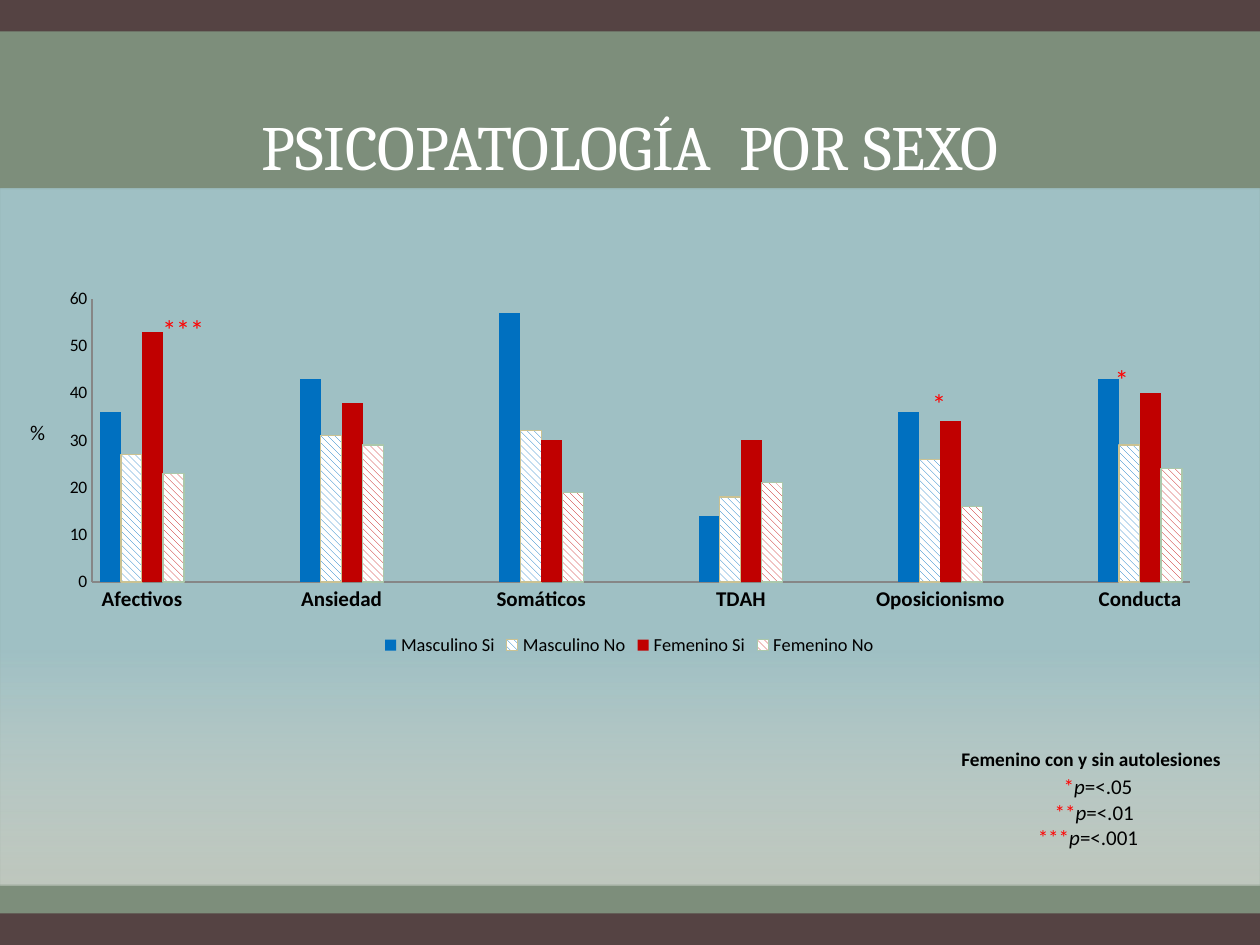
from collections import namedtuple
from dataclasses import dataclass

from lxml import etree
from pptx import Presentation
from pptx.chart.data import CategoryChartData
from pptx.dml.color import RGBColor
from pptx.enum.chart import XL_CHART_TYPE, XL_LEGEND_POSITION, XL_TICK_MARK
from pptx.enum.dml import MSO_PATTERN
from pptx.enum.shapes import MSO_SHAPE
from pptx.enum.text import MSO_ANCHOR, PP_ALIGN
from pptx.oxml.ns import qn
from pptx.util import Inches, Pt

RECTANGLE = MSO_SHAPE.RECTANGLE
COLUMNS = XL_CHART_TYPE.COLUMN_CLUSTERED
HATCH = MSO_PATTERN.WIDE_DOWNWARD_DIAGONAL
NO_TICK = XL_TICK_MARK.NONE
LEGEND_BOTTOM = XL_LEGEND_POSITION.BOTTOM
CENTER, LEFT = PP_ALIGN.CENTER, PP_ALIGN.LEFT
BOTTOM, TOP = MSO_ANCHOR.BOTTOM, MSO_ANCHOR.TOP

SLIDE_W, SLIDE_H = 10, 7.5
Box = namedtuple("Box", "left top width height")
Series = namedtuple("Series", "name values color outline")


@dataclass(frozen=True)
class Theme:
    heading_font: str = "Cambria"
    body_font: str = "Calibri"
    frame: str = "554343"
    band: str = "829782"
    sky: str = "A8CDD7"
    white: str = "FFFFFF"
    text: str = "000000"
    accent: str = "FF0000"
    male: str = "0070C0"
    female: str = "C00000"
    male_outline: str = "CBC292"
    female_outline: str = "ABC8AB"
    axis: str = "868686"
    title_size: float = 36
    star_size: float = 16
    label_size: float = 12
    note_size: float = 11
    legend_size: float = 10.5
    chart_size: float = 10


THEME = Theme()
DISORDERS = ["Afectivos", "Ansiedad", "Somáticos", "TDAH", "Oposicionismo", "Conducta"]
SERIES = [
    Series("Masculino Si", [36, 43, 57, 14, 36, 43], THEME.male, None),
    Series("Masculino No", [27, 31, 32, 18, 26, 29], THEME.male, THEME.male_outline),
    Series("Femenino Si", [53, 38, 30, 30, 34, 40], THEME.female, None),
    Series("Femenino No", [23, 29, 19, 21, 16, 24], THEME.female, THEME.female_outline),
]
# Stars, threshold and left margin (inches) of each significance level
LEVELS = [("*", "=<.05", 0.16), ("**", "=<.01", 0.1), ("***", "=<.001", 0)]


def rgb(color):
    return RGBColor.from_string(color)


def inches(box):
    return [Inches(length) for length in box]


def style(font, size, color, name=THEME.body_font, bold=False, italic=False):
    font.name, font.size, font.bold, font.italic = name, Pt(size), bold, italic
    font.color.rgb = rgb(color)


def set_alpha(color_element, percent):
    alpha = etree.SubElement(color_element, qn("a:alpha"))
    alpha.set("val", str(percent * 1000))


def add_band(slide, box):
    band = slide.shapes.add_shape(RECTANGLE, *inches(box))
    band.shadow.inherit = False
    band.line.fill.background()
    return band


def add_background(slide, box):
    """Dark frame, translucent green band and a sky panel fading downwards."""
    def rows(top, height):
        return Box(box.left, box.top + top * box.height, box.width, height * box.height)

    frame = add_band(slide, box)
    frame.fill.solid()
    frame.fill.fore_color.rgb = rgb(THEME.frame)

    band = add_band(slide, rows(1 / 30, 28 / 30))
    band.fill.solid()
    band.fill.fore_color.rgb = rgb(THEME.band)
    set_alpha(band.fill._xPr.find(".//" + qn("a:srgbClr")), 90)

    panel = add_band(slide, rows(0.2, 0.737))
    panel.fill.gradient()
    panel.fill.gradient_angle = 270
    fades = [(0.66, THEME.sky, 79), (1, THEME.white, 50)]
    for stop, (position, color, _) in zip(panel.fill.gradient_stops, fades):
        stop.position = position
        stop.color.rgb = rgb(color)
    colors = panel.fill._xPr.iter(qn("a:srgbClr"))
    for element, (_, _, opacity) in zip(list(colors), fades):
        set_alpha(element, opacity)


def add_text(slide, box, text, size, color, align=LEFT, anchor=TOP, name=THEME.body_font):
    frame = slide.shapes.add_textbox(*inches(box)).text_frame
    frame.word_wrap = True
    frame.vertical_anchor = anchor
    frame.text = text
    frame.paragraphs[0].alignment = align
    style(frame.paragraphs[0].runs[0].font, size, color, name)
    return frame


def add_significance_note(slide, box):
    frame = add_text(slide, box, "Femenino con y sin autolesiones",
                     THEME.note_size, THEME.text, CENTER)
    frame.margin_top = Inches(0.14)
    heading = frame.paragraphs[0]
    heading.runs[0].font.bold = True
    heading.space_after = Pt(2)
    heading._p.get_or_add_pPr().set("marL", str(Inches(0.05)))
    for stars, threshold, margin in LEVELS:
        level = frame.add_paragraph()
        level.alignment = CENTER
        level._p.get_or_add_pPr().set("marL", str(Inches(margin)))
        for text, color in ((stars, THEME.accent), ("p", THEME.text), (threshold, THEME.text)):
            run = level.add_run()
            run.text = text
            style(run.font, THEME.label_size, color, italic=text == "p")


def spaced(values, gap):
    """Put a gap between neighbouring values, leaving an empty category there."""
    return [item for value in values for item in (value, gap)][:-1]


def set_plot_layout(chart, box):
    """Fix the inner plot area, given as shares of the chart."""
    plot_area = chart._chartSpace.chart.plotArea
    for old in plot_area.findall(qn("c:layout")):
        plot_area.remove(old)
    layout = etree.Element(qn("c:layout"))
    manual = etree.SubElement(layout, qn("c:manualLayout"))
    settings = [("layoutTarget", "inner"), ("xMode", "edge"), ("yMode", "edge"),
                *zip("xywh", box)]
    for tag, value in settings:
        etree.SubElement(manual, qn("c:" + tag)).set("val", str(value))
    plot_area.insert(0, layout)


def add_disorder_chart(slide, box):
    data = CategoryChartData()
    data.categories = spaced(DISORDERS, "")
    for series in SERIES:
        data.add_series(series.name, spaced(series.values, None))
    chart = slide.shapes.add_chart(COLUMNS, *inches(box), data).chart
    style(chart.font, THEME.chart_size, THEME.text)
    chart.has_title = False
    set_plot_layout(chart, Box(0.04, 0.04, 0.94, 0.75))

    chart.has_legend = True
    chart.legend.position = LEGEND_BOTTOM
    chart.legend.include_in_layout = False
    style(chart.legend.font, THEME.legend_size, THEME.text)

    for axis in (chart.category_axis, chart.value_axis):
        axis.major_tick_mark = axis.minor_tick_mark = NO_TICK
        axis.has_major_gridlines = False
        axis.format.line.color.rgb = rgb(THEME.axis)
    style(chart.category_axis.tick_labels.font, THEME.label_size, THEME.text, bold=True)
    chart.value_axis.minimum_scale, chart.value_axis.maximum_scale = 0, 60
    chart.value_axis.major_unit = 10

    plot = chart.plots[0]
    plot.gap_width, plot.overlap, plot.vary_by_categories = 75, 0, False
    for bars, series in zip(plot.series, SERIES):
        fill = bars.format.fill
        if series.outline:
            fill.patterned()
            fill.pattern = HATCH
            fill.back_color.rgb = rgb(THEME.white)
            bars.format.line.color.rgb = rgb(series.outline)
            bars.format.line.width = Pt(0.75)
        else:
            fill.solid()
        fill.fore_color.rgb = rgb(series.color)


def main():
    deck = Presentation()
    deck.slide_width, deck.slide_height = Inches(SLIDE_W), Inches(SLIDE_H)
    slide = deck.slides.add_slide(deck.slide_layouts[6])
    add_background(slide, Box(0, 0, SLIDE_W, SLIDE_H))
    add_text(slide, Box(0.5, 0.25, 9, 1.25), "PSICOPATOLOGÍA  POR SEXO",
             THEME.title_size, THEME.white, CENTER, BOTTOM, THEME.heading_font)
    add_significance_note(slide, Box(7.3, 5.79, 2.67, 1.01))
    add_disorder_chart(slide, Box(0.36, 2.25, 9.27, 3))
    for stars, box in (("*", Box(7.3, 3.02, 0.41, 0.31)),
                       ("*", Box(8.75, 2.83, 0.58, 0.37)),
                       ("***", Box(1.19, 2.43, 0.66, 0.37))):
        add_text(slide, box, stars, THEME.star_size, THEME.accent)
    add_text(slide, Box(0.14, 3.28, 0.33, 0.32), "%", THEME.label_size, THEME.text)
    deck.save("out.pptx")


if __name__ == "__main__":
    main()
